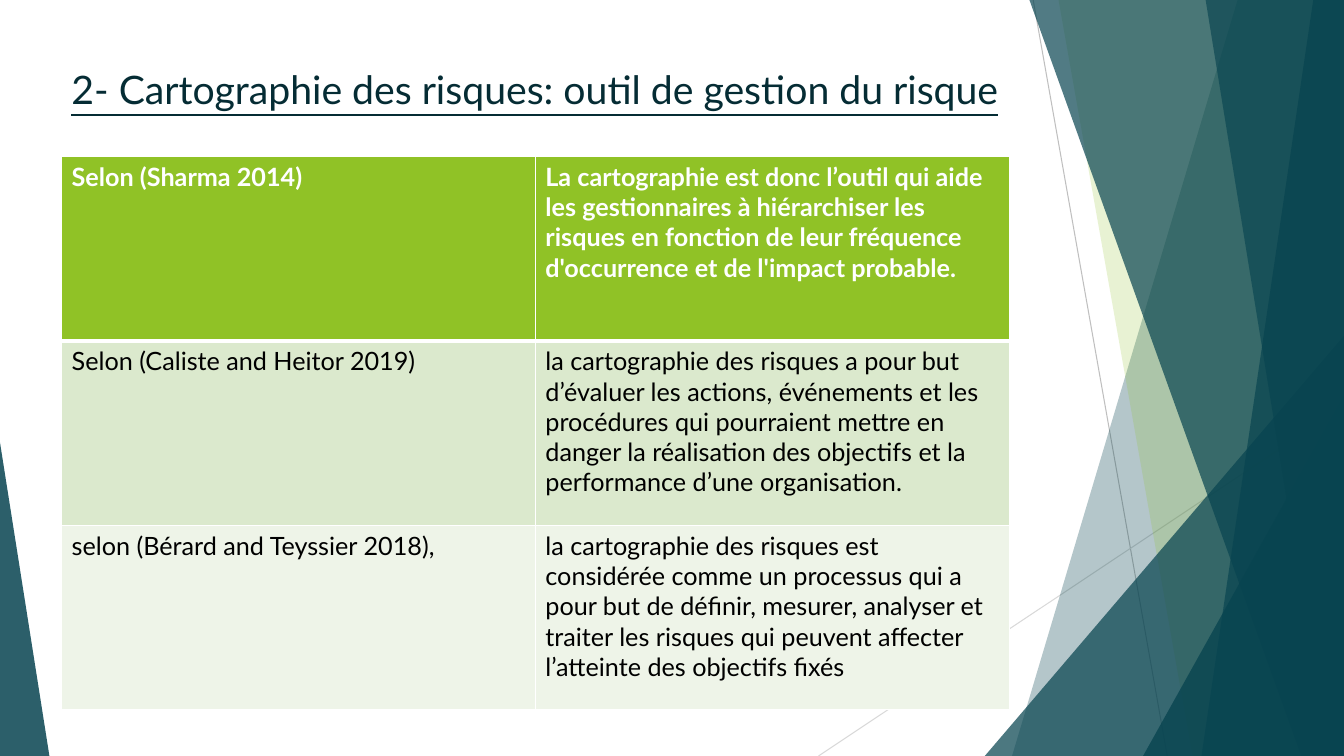
from dataclasses import dataclass

from lxml.etree import SubElement
from pptx import Presentation
from pptx.dml.color import RGBColor
from pptx.enum.shapes import MSO_CONNECTOR as Connector, MSO_SHAPE as Preset
from pptx.enum.text import MSO_ANCHOR as Anchor
from pptx.oxml.ns import qn
from pptx.util import Pt

COLORS = {
    "teal": "084450", "green": "90C226", "title": "052C34",
    "light": "DBE9CD", "pale": "EEF4E8", "white": "FFFFFF", "black": "000000",
    "gray": "BFBFBF", "silver": "D9D9D9",
}
FONT = "Lato"
WIDTH, HEIGHT, TOP = 960, 540, -0.6


@dataclass
class Ray:
    start: tuple[float, float]
    end: tuple[float, float]
    color: str


@dataclass
class Band:
    """A facet reaching from a slanted left side to the right page edge."""
    top_x: float
    bottom_x: float
    opacity: int
    color: str = "teal"


@dataclass
class Wedge:
    """A right triangle standing on the bottom page edge."""
    left: float
    top: float
    width: float
    apex: int
    opacity: int
    color: str = "teal"


@dataclass
class Row:
    source: str
    definition: str
    fill: str
    color: str = "black"
    bold: bool = False
    bottom_border: float = 1


RAYS = [
    Ray((738, 0), (833.76, HEIGHT), "gray"),
    Ray((WIDTH, 290.16), (584.64, HEIGHT), "silver"),
]
FACETS = [
    Band(884.16, 722.88, 30),
    Band(756, 851.76, 20, "green"),
    Wedge(703.44, 239.76, 256.56, 1, 72),
    Band(735.12, 929.52, 70),
    Band(938.16, 858.24, 70),
    Band(861.12, 948.96, 65),
    Wedge(816.48, 282.96, 143.52, 1, 80),
    Wedge(0, 316.08, 35.28, 0, 85),
]
ROWS = [
    Row("Selon (Sharma 2014)",
        "La cartographie est donc l’outil qui aide les gestionnaires à hiérarchiser les "
        "risques en fonction de leur fréquence d'occurrence et de l'impact probable.",
        "green", "white", True, 3),
    Row("Selon (Caliste and Heitor 2019)",
        "la cartographie des risques a pour but d’évaluer les actions, événements et les "
        "procédures qui pourraient mettre en danger la réalisation des objectifs et la "
        "performance d’une organisation.",
        "light"),
    Row("selon (Bérard and Teyssier 2018),",
        "la cartographie des risques est considérée comme un processus qui a pour but de "
        "définir, mesurer, analyser et traiter les risques qui peuvent affecter "
        "l’atteinte des objectifs fixés",
        "pale"),
]


def rgb(name: str) -> RGBColor:
    return RGBColor.from_string(COLORS[name])


def draw_ray(page, ray: Ray) -> None:
    points = [Pt(value) for value in (*ray.start, *ray.end)]
    line = page.shapes.add_connector(Connector.STRAIGHT, *points)
    line.line.color.rgb = rgb(ray.color)
    line.line.width = Pt(0.75)
    SubElement(line._element.spPr, qn("a:effectLst"))


def draw_facet(page, facet: Band | Wedge) -> None:
    if isinstance(facet, Band):
        builder = page.shapes.build_freeform(Pt(facet.top_x), Pt(TOP))
        corners = [(WIDTH, TOP), (WIDTH, HEIGHT), (facet.bottom_x, HEIGHT)]
        builder.add_line_segments([(Pt(x), Pt(y)) for x, y in corners], close=True)
        shape = builder.convert_to_shape()
    else:
        shape = page.shapes.add_shape(
            Preset.ISOSCELES_TRIANGLE, Pt(facet.left), Pt(facet.top),
            Pt(facet.width), Pt(HEIGHT - facet.top))
        shape.adjustments[0] = facet.apex
    shape.shadow.inherit = False
    shape.line.fill.background()
    shape.fill.solid()
    shape.fill.fore_color.rgb = rgb(facet.color)
    color = shape._element.spPr.find(qn("a:solidFill")).find(qn("a:srgbClr"))
    SubElement(color, qn("a:alpha"), val=str(facet.opacity * 1000))


def write(frame, text: str, *, size: float, color: str,
          bold: bool = False, underline: bool = False) -> None:
    span = frame.paragraphs[0].add_run()
    span.text = text
    font = span.font
    font.name, font.size, font.bold = FONT, Pt(size), bold
    font.underline = underline
    font.color.rgb = rgb(color)


def add_borders(cell, bottom: float) -> None:
    properties = cell._tc.get_or_add_tcPr()
    for side, width in {"L": 1, "R": 1, "T": 1, "B": bottom}.items():
        line = SubElement(properties, qn(f"a:ln{side}"), w=str(Pt(width)))
        fill = SubElement(line, qn("a:solidFill"))
        SubElement(fill, qn("a:srgbClr"), val=COLORS["white"])


def draw_table(page, rows: list[Row]) -> None:
    table = page.shapes.add_table(
        len(rows), 2, Pt(44), Pt(111.8), Pt(676.8), Pt(395.3)).table
    for row_index, row in enumerate(rows):
        for column_index, text in enumerate((row.source, row.definition)):
            cell = table.cell(row_index, column_index)
            add_borders(cell, row.bottom_border)
            cell.fill.solid()
            cell.fill.fore_color.rgb = rgb(row.fill)
            write(cell.text_frame, text, size=18, color=row.color, bold=row.bold)


def main() -> None:
    deck = Presentation()
    deck.slide_width, deck.slide_height = Pt(WIDTH), Pt(HEIGHT)
    page = deck.slides.add_slide(deck.slide_layouts[6])

    # Backdrop of rays and translucent facets
    for ray in RAYS:
        draw_ray(page, ray)
    for facet in FACETS:
        draw_facet(page, facet)

    # Title
    box = page.shapes.add_textbox(Pt(44), Pt(43.2), Pt(744.5), Pt(103.7))
    box.text_frame.word_wrap = True
    box.text_frame.vertical_anchor = Anchor.TOP
    write(box.text_frame, "2- Cartographie des risques: outil de gestion du risque",
          size=28, color="title", underline=True)

    # Definitions
    draw_table(page, ROWS)
    deck.save("out.pptx")


if __name__ == "__main__":
    main()
